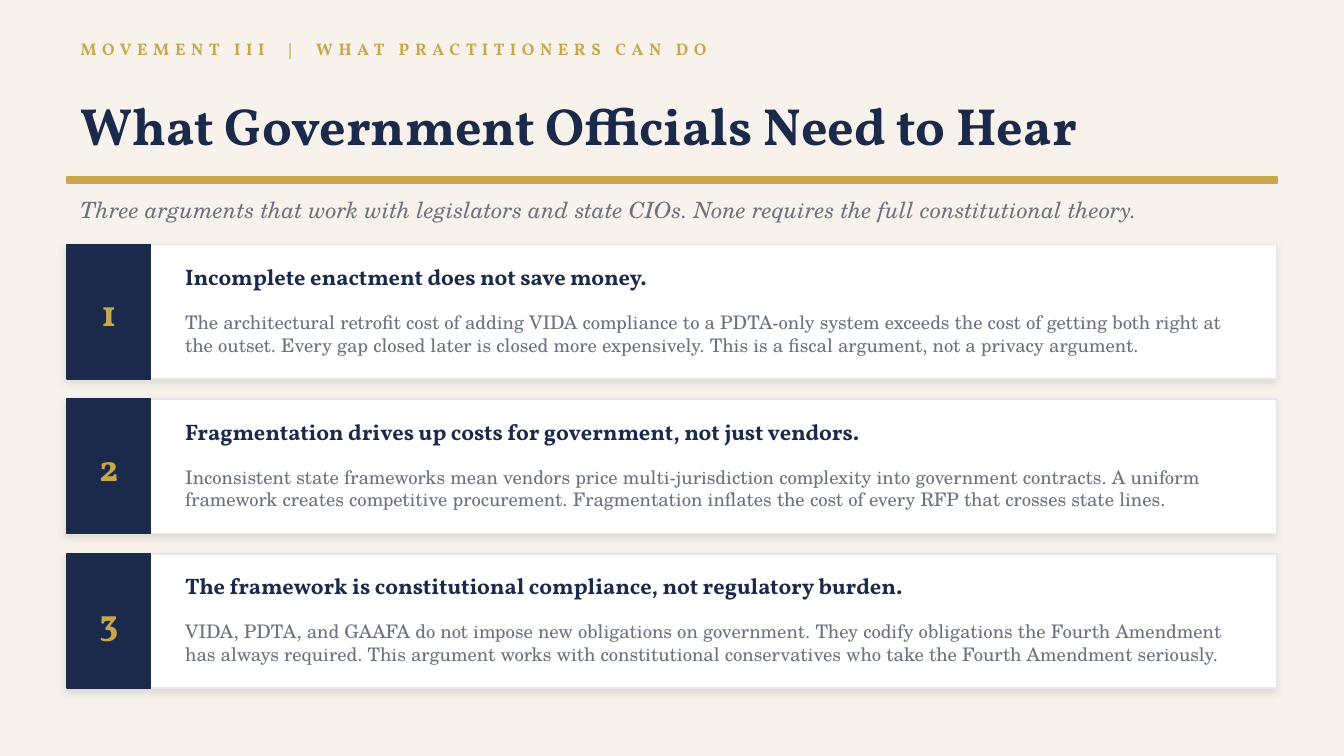
"""Build a slide with three numbered arguments for government officials."""
from lxml import etree
from pptx import Presentation
from pptx.dml.color import RGBColor
from pptx.enum.shapes import MSO_SHAPE
from pptx.enum.text import MSO_ANCHOR, MSO_AUTO_SIZE, PP_ALIGN
from pptx.oxml.ns import qn
from pptx.util import Emu, Pt

RECTANGLE = MSO_SHAPE.RECTANGLE
MIDDLE = MSO_ANCHOR.MIDDLE
NO_AUTOFIT = MSO_AUTO_SIZE.NONE
LEFT, CENTER = PP_ALIGN.LEFT, PP_ALIGN.CENTER

PX = 4572
SLIDE_WIDTH, SLIDE_HEIGHT = 2000, 1125
MARGIN, CONTENT_WIDTH = 100, 1800
CARD_TOP, CARD_HEIGHT, CARD_STEP = 364, 200, 230
BADGE_WIDTH = 124
TEXT_LEFT, TEXT_WIDTH = 256, 1620

DISPLAY, SERIF = "Vollkorn", "TeX Gyre Schola"
THEME = {
    "colors": {"cream": "F7F3EC", "gold": "C9A84C", "navy": "1B2A4A",
               "gray": "6B7280", "white": "FFFFFF", "border": "E5E7EB"},
    "styles": {
        "eyebrow": ("gold", {"name": DISPLAY, "size": Pt(9), "bold": True}),
        "title": ("navy", {"name": DISPLAY, "size": Pt(28), "bold": True}),
        "subtitle": ("gray", {"name": SERIF, "size": Pt(12), "italic": True}),
        "number": ("gold", {"name": DISPLAY, "size": Pt(20), "bold": True}),
        "heading": ("navy", {"name": DISPLAY, "size": Pt(12), "bold": True}),
        "detail": ("gray", {"name": SERIF, "size": Pt(10)}),
    },
}
COLORS = {name: RGBColor.from_string(value) for name, value in THEME["colors"].items()}

ARGUMENTS = [
    ("Incomplete enactment does not save money.",
     "The architectural retrofit cost of adding VIDA compliance to a PDTA-only system exceeds "
     "the cost of getting both right at the outset. Every gap closed later is closed more "
     "expensively. This is a fiscal argument, not a privacy argument."),
    ("Fragmentation drives up costs for government, not just vendors.",
     "Inconsistent state frameworks mean vendors price multi-jurisdiction complexity into "
     "government contracts. A uniform framework creates competitive procurement. "
     "Fragmentation inflates the cost of every RFP that crosses state lines."),
    ("The framework is constitutional compliance, not regulatory burden.",
     "VIDA, PDTA, and GAAFA do not impose new obligations on government. They codify "
     "obligations the Fourth Amendment has always required. This argument works with "
     "constitutional conservatives who take the Fourth Amendment seriously."),
]

deck = Presentation()
deck.slide_width, deck.slide_height = Emu(SLIDE_WIDTH * PX), Emu(SLIDE_HEIGHT * PX)
page = deck.slides.add_slide(deck.slide_layouts[5])
page.background.fill.solid()
page.background.fill.fore_color.rgb = COLORS["cream"]


def write(style, pieces, bounds, align=LEFT, box=None):
    left, top, width, height = [Emu(value * PX) for value in bounds]
    box = box or page.shapes.add_textbox(left, top, width, height)
    box.left, box.top, box.width, box.height = left, top, width, height
    frame = box.text_frame
    frame.word_wrap, frame.auto_size, frame.vertical_anchor = True, NO_AUTOFIT, MIDDLE
    para = frame.paragraphs[0]
    para.alignment = align
    color, format_values = THEME["styles"][style]
    for text, spacing in pieces:
        span = para.add_run()
        span.text = text
        for attribute, value in format_values.items():
            setattr(span.font, attribute, value)
        span.font.color.rgb = COLORS[color]
        if spacing:
            span.font._element.set("spc", str(spacing))


def add_rectangle(bounds, fill, line):
    shape = page.shapes.add_shape(RECTANGLE, *[Emu(value * PX) for value in bounds])
    shape.shadow.inherit = False
    shape.fill.solid()
    shape.fill.fore_color.rgb = COLORS[fill]
    shape.line.color.rgb = COLORS[line]
    shape.line.width = Pt(1)
    return shape


write("eyebrow",
      [("MOVEMENT III", 300), (" ", 820), ("|", 300), (" ", 820),
       ("WHAT PRACTITIONERS CAN DO", 300)],
      (MARGIN, 44, CONTENT_WIDTH, 56))
write("title", [("What Government Officials Need to Hear", 0)],
      (MARGIN, 110, CONTENT_WIDTH, 150), box=page.shapes.title)
add_rectangle((MARGIN, 264, CONTENT_WIDTH, 8), "gold", "gold")
write("subtitle",
      [("Three arguments that work with legislators and state CIOs. "
        "None requires the full constitutional theory.", 0)],
      (MARGIN, 284, CONTENT_WIDTH, 56))

for index, (heading, detail) in enumerate(ARGUMENTS):
    top = CARD_TOP + index * CARD_STEP
    card = add_rectangle((MARGIN, top, CONTENT_WIDTH, CARD_HEIGHT), "white", "border")
    effects = card._element.spPr.find(qn("a:effectLst"))
    shadow = etree.SubElement(effects, qn("a:outerShdw"), blurRad=str(Pt(4)),
                              dist=str(Pt(2)), dir="8100000", algn="bl", rotWithShape="0")
    shade = etree.SubElement(shadow, qn("a:srgbClr"), val="000000")
    etree.SubElement(shade, qn("a:alpha"), val="10000")
    add_rectangle((MARGIN, top, BADGE_WIDTH, CARD_HEIGHT), "navy", "navy")
    write("number", [(str(index + 1), 0)], (MARGIN, top + 60, BADGE_WIDTH, 80), CENTER)
    write("heading", [(heading, 0)], (TEXT_LEFT, top + 20, TEXT_WIDTH, 56))
    write("detail", [(detail, 0)], (TEXT_LEFT, top + 84, TEXT_WIDTH, 96))

deck.save("out.pptx")
